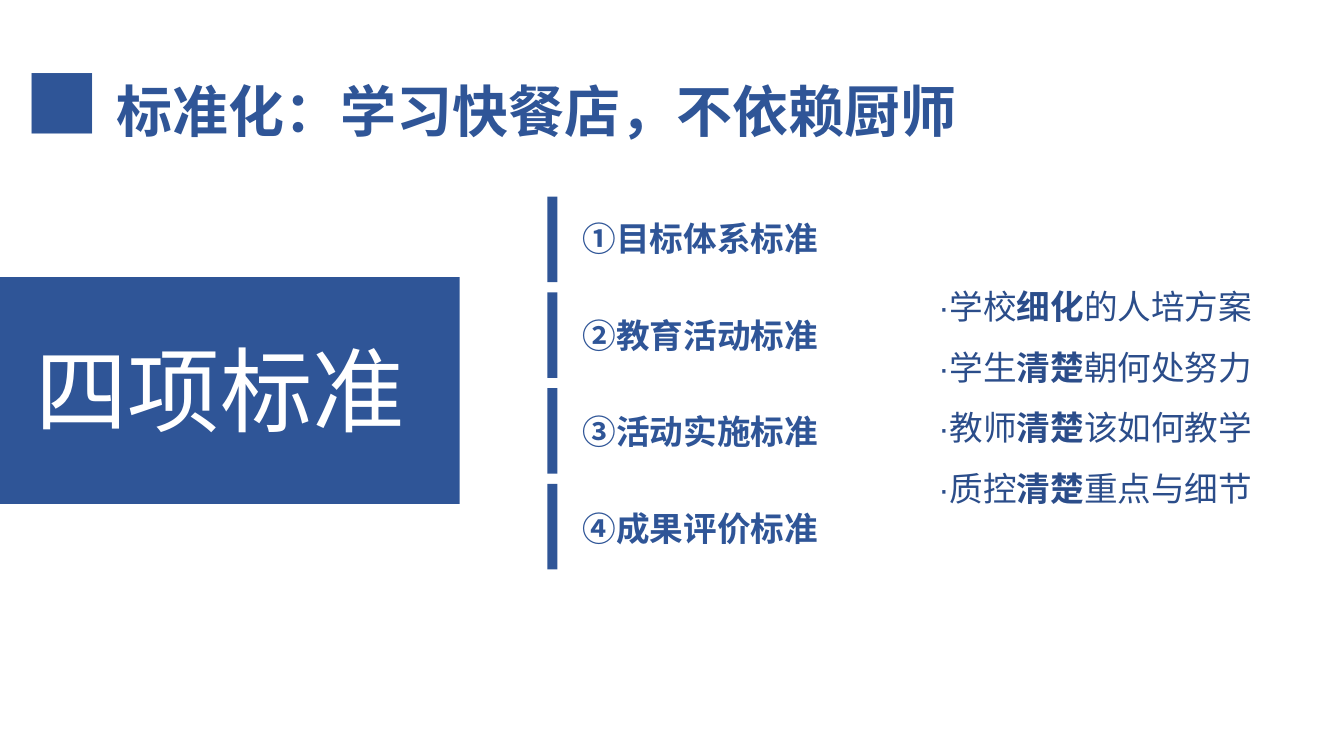
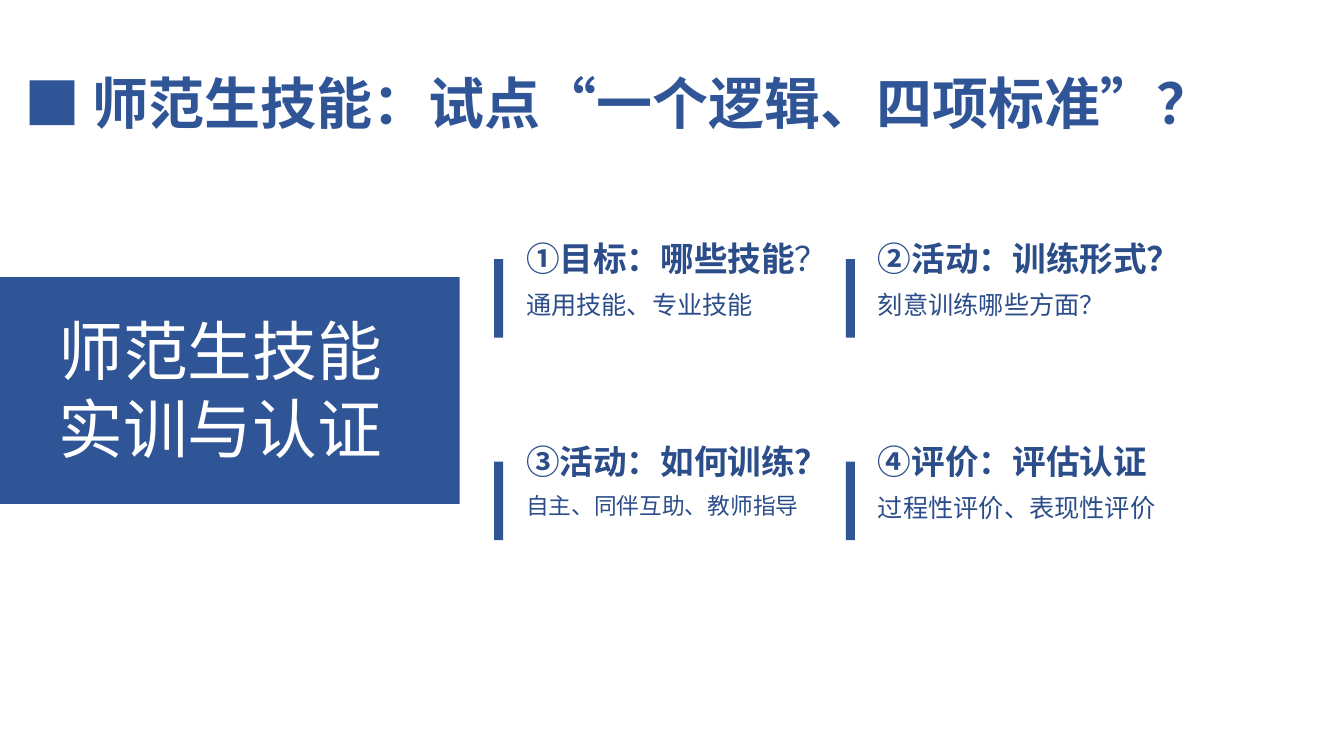
from pptx import Presentation
from pptx.dml.color import RGBColor
from pptx.enum.shapes import MSO_SHAPE
from pptx.enum.text import MSO_ANCHOR, MSO_AUTO_SIZE, PP_ALIGN
from pptx.oxml.ns import qn
from pptx.util import Emu, Pt

RECTANGLE = MSO_SHAPE.RECTANGLE
TOP, MIDDLE, BOTTOM = MSO_ANCHOR.TOP, MSO_ANCHOR.MIDDLE, MSO_ANCHOR.BOTTOM
LEFT, CENTER = PP_ALIGN.LEFT, PP_ALIGN.CENTER
NO_FIT = MSO_AUTO_SIZE.NONE

FONT = "Arial"
BLUE, DARK_BLUE, WHITE = "2F5597", "2B4D8A", "FFFFFF"
TITLE_ONLY = 5


def px(length):
    """100 px to the inch."""
    return Emu(length * 9144)


def color(hex_text):
    return RGBColor.from_string(hex_text)


class Deck:
    def __init__(self):
        self.presentation = Presentation()
        self.presentation.slide_width = px(1333)
        self.presentation.slide_height = px(750)
        self.slide = None

    def add_slide(self, title_runs, panel_lines, panel_size):
        """Start a slide with its title and the blue panel on the left."""
        layout = self.presentation.slide_layouts[TITLE_ONLY]
        self.slide = self.presentation.slides.add_slide(layout)
        title = self.slide.shapes.title
        title.left, title.top, title.width, title.height = map(px, (14, 7, 1286, 189))
        self.fill_text(title, [title_runs], 40, BLUE, anchor=MIDDLE, east_asian=False)
        self.bar(0, 275, 456, 225)
        self.text(0, 291, 437, 189, [[(line, False)] for line in panel_lines],
                  panel_size, WHITE, anchor=MIDDLE, align=CENTER)

    def bar(self, left, top, width, height):
        shape = self.slide.shapes.add_shape(RECTANGLE, *map(px, (left, top, width, height)))
        shape.shadow.inherit = False
        shape.fill.solid()
        shape.fill.fore_color.rgb = color(BLUE)
        shape.line.fill.background()

    def text(self, left, top, width, height, paragraphs, size, hex_text, **style):
        box = self.slide.shapes.add_textbox(*map(px, (left, top, width, height)))
        self.fill_text(box, paragraphs, size, hex_text, **style)

    def fill_text(self, shape, paragraphs, size, hex_text, anchor=TOP, align=LEFT,
                  spacing=1.0, east_asian=True):
        """Each paragraph is a list of runs: (text, bold) or (text, bold, size)."""
        frame = shape.text_frame
        frame.word_wrap = True
        frame.auto_size = NO_FIT
        frame.vertical_anchor = anchor
        for index, runs in enumerate(paragraphs):
            paragraph = frame.add_paragraph() if index else frame.paragraphs[0]
            paragraph.alignment = align
            paragraph.line_spacing = spacing
            for content, bold, *own_size in runs:
                run = paragraph.add_run()
                run.text = content
                run.font.size = Pt(own_size[0] if own_size else size)
                run.font.bold = bold
                run.font.color.rgb = color(hex_text)
                run.font.name = FONT
                if east_asian:
                    latin = run.font._element.find(qn("a:latin"))
                    typeface = latin.makeelement(qn("a:ea"), {"typeface": FONT})
                    latin.addnext(typeface)

    def save(self):
        self.presentation.save("out.pptx")


def add_standards(deck):
    deck.add_slide([("■ ", False, 54), ("标准化：学习快餐店，不依赖厨师", True)],
                   ["四项标准"], 66)

    # Four standards, each beside a bar
    standards = ["①目标体系标准", "②教育活动标准", "③活动实施标准", "④成果评价标准"]
    for row, standard in enumerate(standards):
        deck.bar(543, 195 + 95 * row, 10, 85)
        deck.text(568, 192 + 96 * row, 322, 69, [[(standard, True)]], 24, BLUE,
                  anchor=BOTTOM)

    # Effects
    effects = [("·学校", "细化", "的人培方案"), ("·学生", "清楚", "朝何处努力"),
               ("·教师", "清楚", "该如何教学"), ("·质控", "清楚", "重点与细节")]
    deck.text(921, 259, 377, 252,
              [[(who, False), (key, True), (what, False)] for who, key, what in effects],
              24, DARK_BLUE, spacing=1.5)


def add_skills(deck):
    deck.add_slide([("■ 师范生技能：试点“一个逻辑、四项标准”？", True)],
                   ["师范生技能", "实训与认证"], 46.2)

    # Two by two questions: heading runs, detail, detail size
    questions = [
        ([("①目标：哪些技能", True), ("？", False)], "通用技能、专业技能", 18),
        ([("②活动：训练形式？", True)], "刻意训练哪些方面？", 18),
        ([("③活动：如何训练？", True)], "自主、同伴互助、教师指导", 16.2),
        ([("④评价：评估认证", True)], "过程性评价、表现性评价", 18),
    ]
    for index, (heading, detail, detail_size) in enumerate(questions):
        row, column = divmod(index, 2)
        left, top = 512 + 349 * column, 217 + 201 * row
        deck.bar(left - 22, top + 40, 9, 78)
        deck.text(left, top, 296, 64, [heading], 24, DARK_BLUE, anchor=BOTTOM)
        deck.text(left, top + 65, 296, 81, [[(detail, False)]], detail_size, DARK_BLUE)


def main():
    deck = Deck()
    add_standards(deck)
    add_skills(deck)
    deck.save()


if __name__ == "__main__":
    main()
